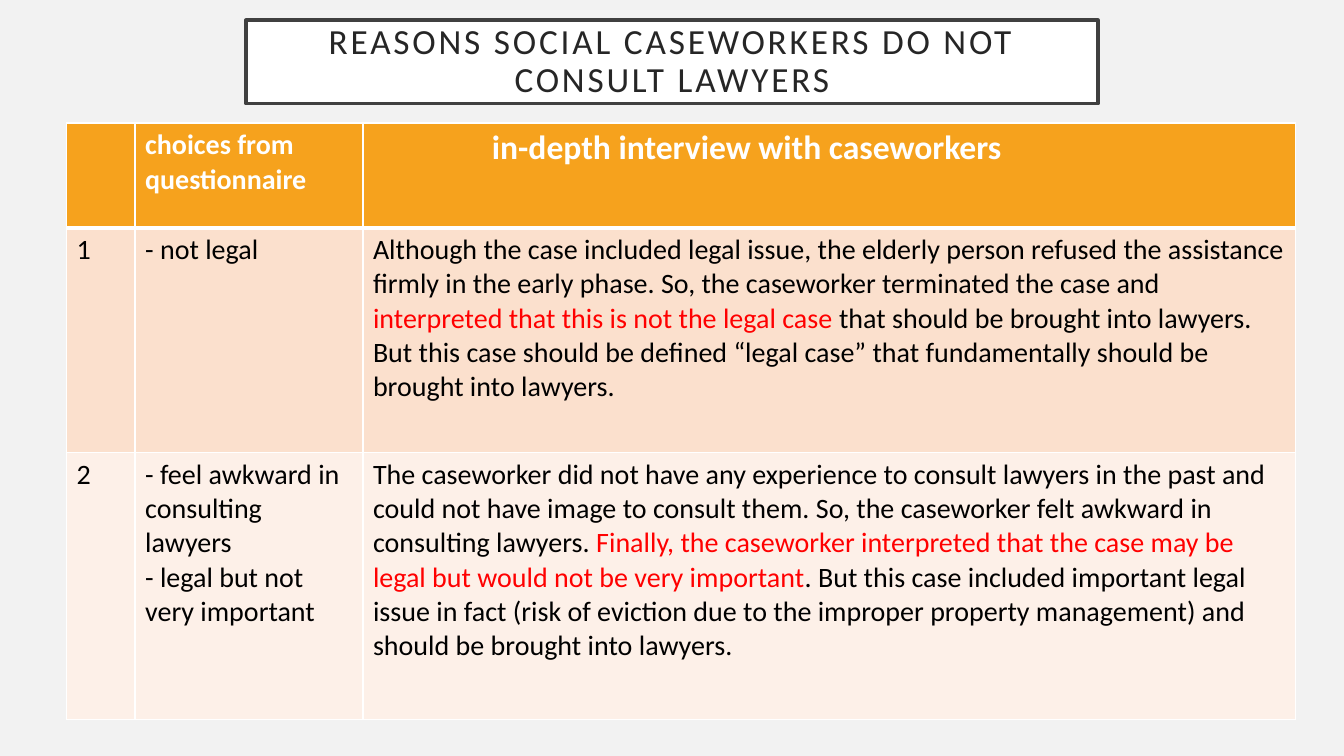
from dataclasses import dataclass

from lxml import etree
from pptx import Presentation
from pptx.dml.color import RGBColor
from pptx.enum.shapes import MSO_SHAPE
from pptx.enum.text import MSO_ANCHOR, PP_ALIGN
from pptx.oxml.ns import qn
from pptx.util import Inches, Pt

RECT = MSO_SHAPE.RECTANGLE
MIDDLE = MSO_ANCHOR.MIDDLE
CENTER = PP_ALIGN.CENTER


@dataclass(frozen=True)
class Theme:
    font: str = "Calibri"
    background: str = "F2F2F2"
    white: str = "FFFFFF"
    frame: str = "404040"
    title: str = "262626"
    header: str = "F6A21D"
    bands: tuple = ("FBE0CD", "FDF0E8")
    text: str = "000000"
    accent: str = "FF0000"
    title_size: float = 25.2
    heading_size: float = 24
    body_size: float = 20


THEME = Theme()

TITLE = "REASONS SOCIAL CASEWORKERS DO NOT CONSULT LAWYERS"
COLUMN_WIDTHS = (0.68, 2.26, 9.25)
ROW_HEIGHTS = (1.04, 2.23, 2.65)
HEADINGS = (
    ("", THEME.body_size),
    ("choices from questionnaire", THEME.body_size),
    ("in-depth interview with caseworkers", THEME.heading_size),
)
HEADING_INDENT = 1.28
# Each reason: choices, then the interview as text before, highlight, text after
REASONS = (
    (
        ("- not legal",),
        (
            "Although the case included legal issue, the elderly person refused the "
            "assistance firmly in the early phase. So, the caseworker terminated the "
            "case and ",
            "interpreted that this is not the legal case ",
            "that should be brought into lawyers. But this case should be defined "
            "“legal case” that fundamentally should be brought into lawyers.",
        ),
    ),
    (
        ("- feel awkward in consulting lawyers", "- legal but not very important"),
        (
            "The caseworker did not have any experience to consult lawyers in the "
            "past and could not have image to consult them. So, the caseworker felt "
            "awkward in consulting lawyers. ",
            "Finally, the caseworker interpreted that the case may be legal but "
            "would not be very important",
            ". But this case included important legal issue in fact (risk of "
            "eviction due to the improper property management) and should be "
            "brought into lawyers.",
        ),
    ),
)


def rgb(color):
    return RGBColor.from_string(color)


def add_run(p, text, color, size=THEME.body_size, bold=False):
    r = p.add_run()
    r.text = text
    font_format = {"name": THEME.font, "size": Pt(size), "bold": bold}
    for name, value in font_format.items():
        setattr(r.font, name, value)
    r.font.color.rgb = rgb(color)
    return r


def style_cell(cell, fill, bottom_width=1):
    """Draw white borders, then fill the cell: the schema wants that order."""
    tc_pr = cell._tc.get_or_add_tcPr()
    for side, width in (("L", 1), ("R", 1), ("T", 1), ("B", bottom_width)):
        line = etree.SubElement(tc_pr, qn(f"a:ln{side}"), w=str(Pt(width)))
        solid = etree.SubElement(line, qn("a:solidFill"))
        etree.SubElement(solid, qn("a:srgbClr"), val=THEME.white)
    cell.fill.solid()
    cell.fill.fore_color.rgb = rgb(fill)


def add_title(s, left, top, width, height):
    sp = s.shapes.add_shape(RECT, *map(Inches, (left, top, width, height)))
    sp.shadow.inherit = False
    sp.fill.solid()
    sp.fill.fore_color.rgb = rgb(THEME.white)
    sp.line.color.rgb = rgb(THEME.frame)
    sp.line.width = Pt(2.5)
    tf = sp.text_frame
    frame_format = {
        "word_wrap": True,
        "vertical_anchor": MIDDLE,
        "margin_left": Inches(0.2),
        "margin_right": Inches(0.2),
        "margin_top": 0,
        "margin_bottom": 0,
    }
    for name, value in frame_format.items():
        setattr(tf, name, value)
    p = tf.paragraphs[0]
    p.alignment = CENTER
    p.line_spacing = 0.9
    r = add_run(p, TITLE, THEME.title, THEME.title_size)
    r.font._element.set("spc", "200")


def fill_header(table):
    for col, (heading, size) in enumerate(HEADINGS):
        cell = table.cell(0, col)
        style_cell(cell, THEME.header, bottom_width=3)
        if heading:
            add_run(cell.text_frame.paragraphs[0], heading, THEME.white, size, True)
    table.cell(0, len(HEADINGS) - 1).margin_left = Inches(HEADING_INDENT)


def fill_reason(table, row, choices, interview):
    number_cell, choice_cell, interview_cell = table.rows[row].cells
    for cell in (number_cell, choice_cell, interview_cell):
        style_cell(cell, THEME.bands[(row - 1) % len(THEME.bands)])
    add_run(number_cell.text_frame.paragraphs[0], str(row), THEME.text)
    tf = choice_cell.text_frame
    for i, choice in enumerate(choices):
        p = tf.add_paragraph() if i else tf.paragraphs[0]
        add_run(p, choice, THEME.text)
    p = interview_cell.text_frame.paragraphs[0]
    for text, color in zip(interview, (THEME.text, THEME.accent, THEME.text)):
        add_run(p, text, color)


def add_reasons_table(s, left, top):
    size = (sum(COLUMN_WIDTHS), sum(ROW_HEIGHTS))
    table = s.shapes.add_table(
        len(ROW_HEIGHTS), len(COLUMN_WIDTHS), *map(Inches, (left, top, *size))
    ).table
    for column, width in zip(table.columns, COLUMN_WIDTHS):
        column.width = Inches(width)
    for row, height in zip(table.rows, ROW_HEIGHTS):
        row.height = Inches(height)
    fill_header(table)
    for row, (choices, interview) in enumerate(REASONS, start=1):
        fill_reason(table, row, choices, interview)


def main():
    prs = Presentation()
    prs.slide_width, prs.slide_height = Inches(13.33), Inches(7.5)
    s = prs.slides.add_slide(prs.slide_layouts[6])
    s.background.fill.solid()
    s.background.fill.fore_color.rgb = rgb(THEME.background)
    add_title(s, 2.44, 0.2, 8.45, 0.83)
    add_reasons_table(s, 0.66, 1.22)
    prs.save("out.pptx")


if __name__ == "__main__":
    main()
